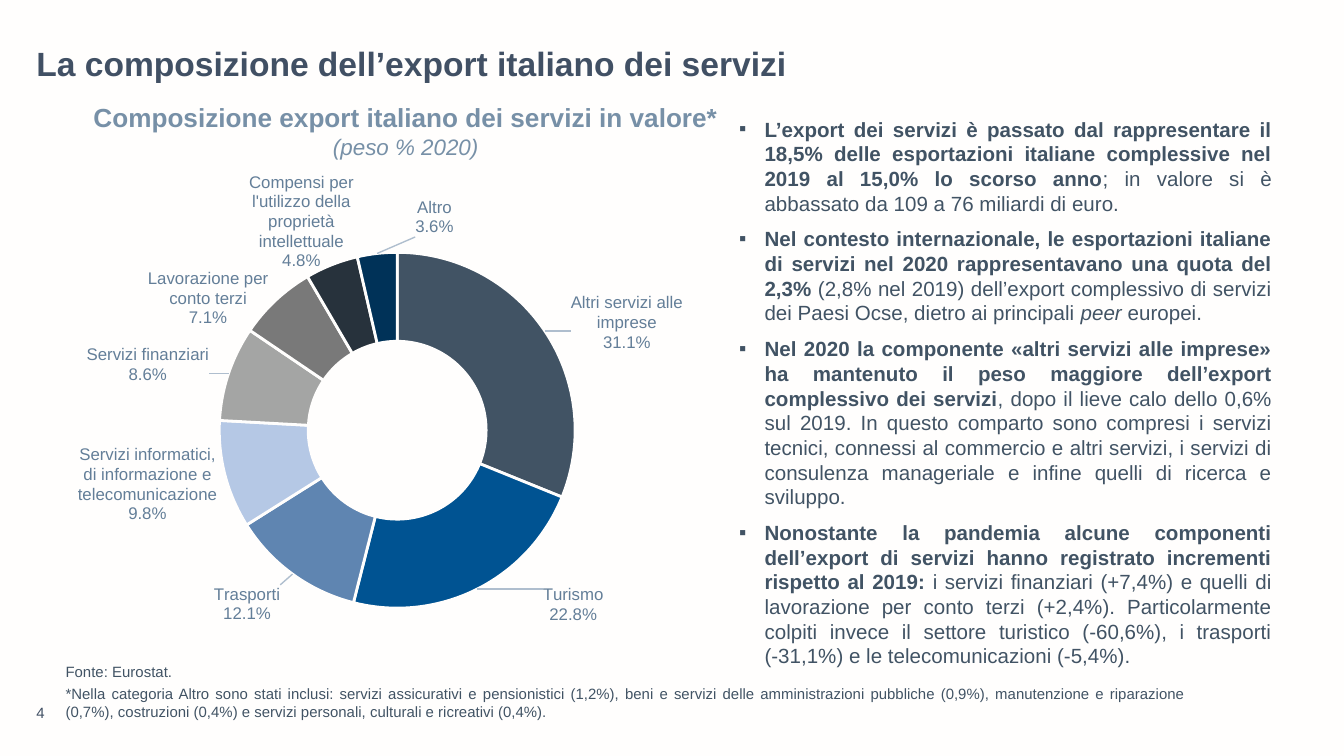
from dataclasses import dataclass
from math import cos, pi, sin

from pptx import Presentation
from pptx.chart.data import CategoryChartData
from pptx.dml.color import RGBColor
from pptx.enum.chart import XL_CHART_TYPE
from pptx.enum.text import MSO_ANCHOR, PP_ALIGN
from pptx.oxml import parse_xml
from pptx.oxml.ns import nsdecls, qn
from pptx.util import Cm, Pt

RING = XL_CHART_TYPE.DOUGHNUT
LEFT, MID, FULL = PP_ALIGN.LEFT, PP_ALIGN.CENTER, PP_ALIGN.JUSTIFY
TOP, LOW = MSO_ANCHOR.TOP, MSO_ANCHOR.BOTTOM


@dataclass(frozen=True)
class Theme:
    font: str = "Arial"
    back: str = "FFFEFD"
    dark: str = "415064"
    text: str = "415364"
    head: str = "7790A7"
    label: str = "637E98"
    lead: str = "AFBECE"
    title: int = 18
    big: int = 14
    sub: int = 12
    body: int = 11
    plot: int = 10
    tag: int = 9
    small: int = 8


T = Theme()

SLICES = [
    ("Altri servizi alle imprese", 0.311, "415364", (0.85, 0.32), 0.19, 3),
    ("Turismo", 0.228, "005392", (0.77, 0.91), 0.12, 2),
    ("Trasporti", 0.121, "5F85B1", (0.28, 0.91), 0.12, 2),
    ("Servizi informatici, di informazione e telecomunicazione",
     0.098, "B5C8E5", (0.13, 0.66), 0.23, 4),
    ("Servizi finanziari", 0.086, "A4A5A4", (0.13, 0.41), 0.21, 2),
    ("Lavorazione per conto terzi", 0.071, "797979", (0.22, 0.27), 0.2, 3),
    ("Compensi per l'utilizzo della proprietà intellettuale",
     0.048, "27323C", (0.36, 0.11), 0.18, 5),
    ("Altro", 0.036, "003258", (0.56, 0.1), 0.1, 2),
]

POINTS = [
    [("L’export dei servizi è passato dal rappresentare il 18,5% delle "
      "esportazioni italiane complessive nel 2019 al 15,0% lo scorso anno", "b"),
     ("; in valore si è abbassato da 109 a 76 miliardi di euro.", "")],
    [("Nel contesto internazionale, le esportazioni italiane di servizi nel "
      "2020 rappresentavano una quota del 2,3% ", "b"),
     ("(2,8% nel 2019) dell’export complessivo di servizi dei Paesi Ocse, "
      "dietro ai principali ", ""),
     ("peer ", "i"), ("europei.", "")],
    [("Nel 2020 la componente «altri servizi alle imprese» ha mantenuto il "
      "peso maggiore dell’export complessivo dei servizi", "b"),
     (", dopo il lieve calo dello 0,6% sul 2019. In questo comparto sono "
      "compresi i servizi tecnici, connessi al commercio e altri servizi, i "
      "servizi di consulenza manageriale e infine quelli di ricerca e "
      "sviluppo.", "")],
    [("Nonostante la pandemia alcune componenti dell’export di servizi hanno "
      "registrato incrementi rispetto al 2019:", "b"),
     (" i servizi finanziari (+7,4%) e quelli di lavorazione per conto terzi "
      "(+2,4%). Particolarmente colpiti invece il settore turistico (-60,6%), "
      "i trasporti", ""),
     ("", "break"),
     ("(-31,1%) e le telecomunicazioni (-5,4%).", "")],
]

NOTE = ("*Nella categoria Altro sono stati inclusi: servizi assicurativi e "
        "pensionistici (1,2%), beni e servizi delle amministrazioni pubbliche "
        "(0,9%), manutenzione e riparazione (0,7%), costruzioni (0,4%) e "
        "servizi personali, culturali e ricreativi (0,4%).")


def color(code):
    return RGBColor.from_string(code)


def add_box(slide, place, anchor=TOP, flush=False):
    frame = slide.shapes.add_textbox(*map(Cm, place)).text_frame
    frame.word_wrap = True
    frame.vertical_anchor = anchor
    if flush:
        frame.margin_left = frame.margin_right = 0
        frame.margin_top = frame.margin_bottom = 0
    return frame


def add_para(frame, parts, size, tone, align=LEFT, after=0, bullet=False):
    para = frame.paragraphs[0]
    if para.runs:
        para = frame.add_paragraph()
    para.alignment = align
    para.space_after = Pt(after)
    if bullet:
        add_mark(para)
    para.font.size = Pt(size)
    for words, style in parts:
        if style == "break":
            para.add_line_break()
            continue
        run = para.add_run()
        run.text = words
        run.font.name = T.font
        run.font.size = Pt(size)
        run.font.bold = style == "b"
        run.font.italic = style == "i"
        run.font.color.rgb = color(tone)
    return para


def add_mark(para):
    props = para._p.get_or_add_pPr()
    props.set("marL", str(Cm(0.48)))
    props.set("indent", str(-Cm(0.48)))
    props.append(parse_xml(f'<a:buFont {nsdecls("a")} typeface="{T.font}"/>'))
    props.append(parse_xml(f'<a:buChar {nsdecls("a")} char="▪"/>'))


def layout(x, y, inner="", size=""):
    return (f'<c:layout {nsdecls("c")}><c:manualLayout>{inner}'
            f'<c:x val="{x:.4f}"/><c:y val="{y:.4f}"/>{size}'
            '</c:manualLayout></c:layout>')


def flags(value):
    return ('<c:showLegendKey val="0"/>'
            f'<c:showVal val="{int(value)}"/><c:showCatName val="1"/>'
            f'<c:showSerName val="0"/><c:showPercent val="{int(not value)}"/>'
            '<c:showBubbleSize val="0"/><c:separator>\n</c:separator>')


def tag_list():
    look = ('<c:numFmt formatCode="0.0%" sourceLinked="0"/>'
            '<c:spPr><a:noFill/><a:ln><a:noFill/></a:ln></c:spPr>'
            '<c:txPr><a:bodyPr wrap="square"/><a:p><a:pPr>'
            f'<a:defRPr sz="{T.tag * 100}" b="0"><a:solidFill>'
            f'<a:srgbClr val="{T.label}"/></a:solidFill>'
            f'<a:latin typeface="{T.font}"/></a:defRPr></a:pPr>'
            '<a:endParaRPr lang="it-IT"/></a:p></c:txPr>')
    tags, done = "", 0
    for index, (_, share, _, spot, width, lines) in enumerate(SLICES):
        turn = 2 * pi * (done + share / 2)
        done += share
        x = spot[0] - 0.505 - 0.2 * sin(turn)
        y = spot[1] - 0.545 + 0.28 * cos(turn)
        tags += (f'<c:dLbl><c:idx val="{index}"/>{layout(x, y)}{look}'
                 f'{flags(index == 0)}<c:extLst>'
                 '<c:ext uri="{CE6537A1-D6FC-4f65-9D91-7224C49458BB}">'
                 '<c15:layout><c:manualLayout>'
                 f'<c:w val="{width}"/><c:h val="{lines * 0.04 + 0.02:.2f}"/>'
                 '</c:manualLayout></c15:layout></c:ext></c:extLst></c:dLbl>')
    return parse_xml(
        f'<c:dLbls {nsdecls("c", "a")} xmlns:c15='
        '"http://schemas.microsoft.com/office/drawing/2012/chart">'
        f'{tags}{look}{flags(False)}<c:showLeaderLines val="1"/>'
        '<c:leaderLines><c:spPr><a:ln w="9525"><a:solidFill>'
        f'<a:srgbClr val="{T.lead}"/></a:solidFill></a:ln></c:spPr>'
        '</c:leaderLines></c:dLbls>')


def add_ring(slide, place):
    data = CategoryChartData(number_format="0.0%")
    data.categories = [row[0] for row in SLICES]
    data.add_series("Series 1", [row[1] for row in SLICES])
    chart = slide.shapes.add_chart(RING, *map(Cm, place), data).chart
    chart.has_title = chart.has_legend = False
    chart.font.name = T.font
    chart.font.size = Pt(T.plot)
    chart.font.color.rgb = color(T.text)
    plot = chart.plots[0]
    plot.vary_by_categories = True
    series = plot.series[0]
    for index, row in enumerate(SLICES):
        style = series.points[index].format
        style.fill.solid()
        style.fill.fore_color.rgb = color(row[2])
        style.line.color.rgb = color(T.back)
        style.line.width = Pt(1.5)
    for old in plot._element.findall(qn("c:dLbls")):
        plot._element.remove(old)
    series._element.find(qn("c:cat")).addprevious(tag_list())
    area = chart._chartSpace.chart.plotArea
    for old in area.findall(qn("c:layout")):
        area.remove(old)
    inner = ('<c:layoutTarget val="inner"/>'
             '<c:xMode val="edge"/><c:yMode val="edge"/>')
    size = '<c:w val="0.536"/><c:h val="0.76"/>'
    area.insert(0, parse_xml(layout(0.237, 0.165, inner, size)))


def main():
    deck = Presentation()
    deck.slide_width, deck.slide_height = Cm(25.4), Cm(14.29)
    slide = deck.slides.add_slide(deck.slide_layouts[6])
    slide.background.fill.solid()
    slide.background.fill.fore_color.rgb = color(T.back)

    head = add_box(slide, (1.32, 1.8, 12.7, 1.37))
    add_para(head, [("Composizione export italiano dei servizi in valore*", "b")],
             T.big, T.head, MID)
    add_para(head, [("(peso % 2020)", "i")], T.sub, T.head, MID)

    page = add_box(slide, (0.69, 13.13, 2.79, 0.51), LOW, True)
    add_para(page, [("4", "")], T.small, T.dark)

    foot = add_box(slide, (0.99, 12.4, 21.69, 1.35))
    add_para(foot, [("Fonte: Eurostat.", "")], T.small, T.text, after=2)
    add_para(foot, [(NOTE, "")], T.small, T.text, FULL, 2)

    title = add_box(slide, (0.69, 0.89, 24.26, 0.79), flush=True)
    para = add_para(title, [("La composizione dell’export italiano dei servizi", "b")],
                    T.title, T.dark)
    para.line_spacing = 0.9

    body = add_box(slide, (13.72, 2.08, 10.57, 10.77))
    for parts in POINTS:
        add_para(body, parts, T.body, T.text, FULL, 6, True)

    add_ring(slide, (1.17, 3.18, 12.55, 9.09))
    deck.save("out.pptx")


if __name__ == "__main__":
    main()
